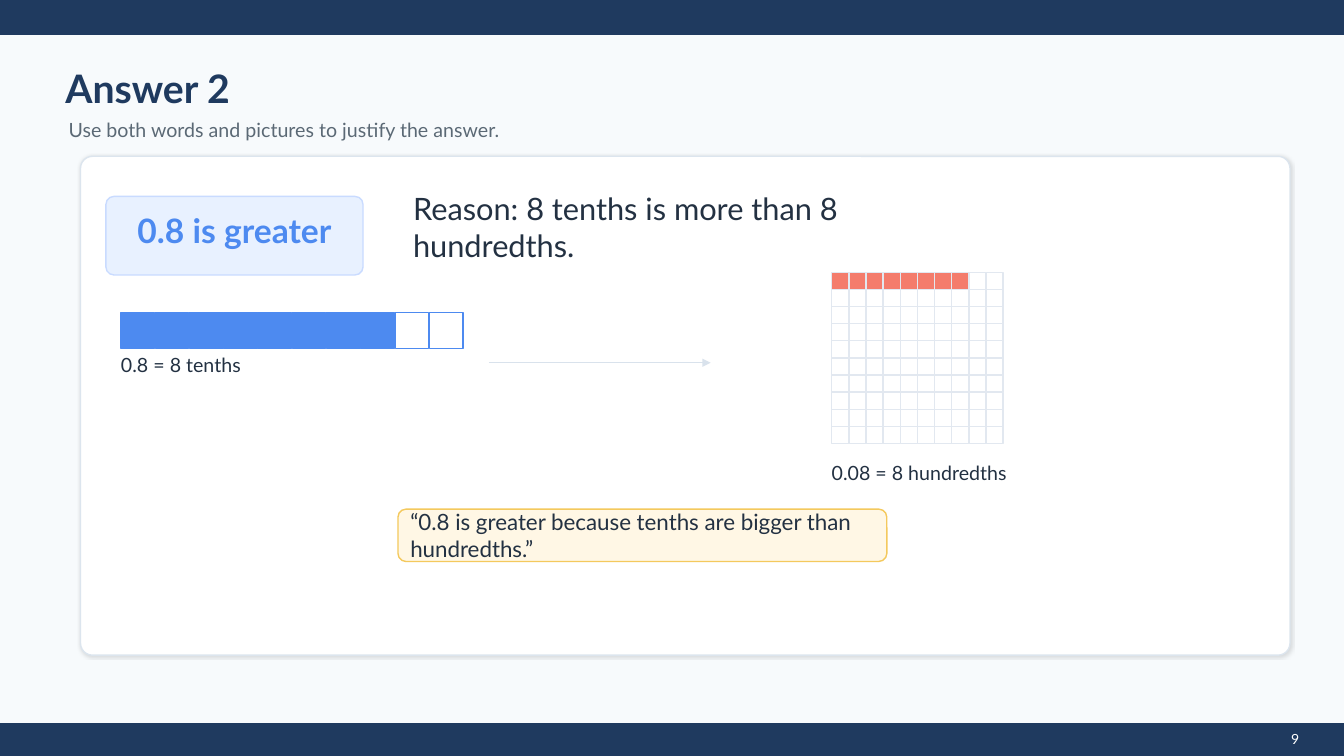
"""Build the "Answer 2" slide comparing 0.8 with 0.08."""
from dataclasses import dataclass

from lxml import etree
from pptx import Presentation
from pptx.dml.color import RGBColor
from pptx.enum.shapes import MSO_CONNECTOR, MSO_SHAPE
from pptx.enum.text import MSO_ANCHOR, PP_ALIGN
from pptx.oxml import parse_xml
from pptx.oxml.ns import nsdecls, qn
from pptx.util import Cm, Pt

RECT = MSO_SHAPE.RECTANGLE
ROUND = MSO_SHAPE.ROUNDED_RECTANGLE
STRAIGHT = MSO_CONNECTOR.STRAIGHT
TOP, MIDDLE = MSO_ANCHOR.TOP, MSO_ANCHOR.MIDDLE
LEFT, CENTER = PP_ALIGN.LEFT, PP_ALIGN.CENTER


@dataclass(frozen=True)
class Theme:
    """Colours, font and type sizes of the slide."""
    font: str = "Lato"
    back: str = "F7FAFC"
    navy: str = "1F3A5F"
    gray: str = "5B6975"
    ink: str = "233142"
    white: str = "FFFFFF"
    edge: str = "DCE5EE"
    blue: str = "4D8AF0"
    pale: str = "E8F1FF"
    rim: str = "C9DBFF"
    coral: str = "F47C6C"
    mesh: str = "E2E8F0"
    arrow: str = "D9E2EC"
    cream: str = "FFF7E5"
    gold: str = "F4C95D"
    title: int = 28
    answer: int = 24
    reason: int = 22
    quote: int = 16
    label: int = 14
    page: int = 10


THEME = Theme()


def rgb(code):
    """Turn a hex code into a colour."""
    return RGBColor.from_string(code)


def add_text(slide, text, box, size=THEME.label, color=THEME.ink, bold=False,
             align=LEFT, anchor=MIDDLE, pad=(0, 0)):
    """Add a wrapped text box; box and pad are in centimetres."""
    frame = slide.shapes.add_textbox(*map(Cm, box)).text_frame
    frame.word_wrap = True
    frame.vertical_anchor = anchor
    frame.margin_left = frame.margin_right = Cm(pad[0])
    frame.margin_top = frame.margin_bottom = Cm(pad[1])
    para = frame.paragraphs[0]
    para.alignment = align
    run = para.add_run()
    run.text = text
    font = run.font
    font.name, font.size, font.bold = THEME.font, Pt(size), bold
    font.color.rgb = rgb(color)


def add_box(slide, box, fill, line, curve=None):
    """Add a filled rectangle, rounded when a curve is given."""
    shape = slide.shapes.add_shape(RECT if curve is None else ROUND, *map(Cm, box))
    if curve is not None:
        shape.adjustments[0] = curve
    shape.shadow.inherit = False
    shape.fill.solid()
    shape.fill.fore_color.rgb = rgb(fill)
    shape.line.color.rgb = rgb(line)
    shape.line.width = Pt(1)
    return shape


def add_shade(shape):
    """Give a shape a faint shadow to the lower right."""
    shape._element.spPr.find(qn("a:effectLst")).append(parse_xml(
        f'<a:outerShdw {nsdecls("a")} blurRad="{Pt(2)}" dist="{Pt(1)}" '
        'dir="2700000" algn="ctr" rotWithShape="0"><a:srgbClr val="000000">'
        '<a:alpha val="12000"/></a:srgbClr></a:outerShdw>'))


def add_cells(slide, left, top, size, rows, full, fill, line):
    """Draw rows of ten cells with the first full ones coloured."""
    wide, high, step = size
    for n in range(rows * 10):
        row, col = divmod(n, 10)
        box = (left + col * step, top + row * high, wide, high)
        add_box(slide, box, fill if n < full else THEME.white, line)


def add_arrow(slide, start, end):
    """Draw a thin arrow between two points."""
    link = slide.shapes.add_connector(STRAIGHT, *map(Cm, start + end))
    link.line.color.rgb = rgb(THEME.arrow)
    link.line.width = Pt(1)
    etree.SubElement(link.line._get_or_add_ln(), qn("a:tailEnd"), type="triangle")
    etree.SubElement(link._element.spPr, qn("a:effectLst"))


def add_frame(slide):
    """Draw the background, both bands, the heading and the page number."""
    slide.background.fill.solid()
    slide.background.fill.fore_color.rgb = rgb(THEME.back)
    for top, high in ((0, 0.86), (18.24, 0.81)):
        add_box(slide, (0, top, 33.87, high), THEME.navy, THEME.navy)
    add_text(slide, "Answer 2", (1.65, 1.57, 17.78, 1.27),
             size=THEME.title, color=THEME.navy, bold=True)
    add_text(slide, "Use both words and pictures to justify the answer.",
             (1.73, 2.92, 20.83, 0.71), color=THEME.gray)
    add_text(slide, "9", (32.13, 18.29, 1.02, 0.41), size=THEME.page,
             color=THEME.white, align=CENTER, anchor=TOP, pad=(0.25, 0.13))


def add_answer(slide):
    """Draw the card with the answer and its reason."""
    card = add_box(slide, (2.03, 3.94, 30.48, 12.57), THEME.white, THEME.edge, 0.024)
    add_shade(card)
    add_box(slide, (2.67, 4.95, 6.48, 1.98), THEME.pale, THEME.rim, 0.103)
    add_text(slide, "0.8 is greater", (3.18, 5.49, 5.46, 0.61),
             size=THEME.answer, color=THEME.blue, bold=True, align=CENTER)
    add_text(slide, "Reason: 8 tenths is more than 8 hundredths.",
             (10.41, 5.33, 14.22, 0.76), size=THEME.reason)


def add_models(slide):
    """Draw the tenths bar, the hundredths grid and the arrow."""
    add_cells(slide, 3.05, 7.87, (0.84, 0.91, 0.864), 1, 8, THEME.blue, THEME.blue)
    add_text(slide, "0.8 = 8 tenths", (3.05, 8.89, 8.89, 0.61))
    add_cells(slide, 20.96, 6.86, (0.432, 0.432, 0.432), 10, 8,
              THEME.coral, THEME.mesh)
    add_text(slide, "0.08 = 8 hundredths", (20.96, 11.38, 6.1, 1.07))
    add_arrow(slide, (12.32, 9.14), (17.91, 9.14))


def add_quote(slide):
    """Draw the model sentence in its own box."""
    add_box(slide, (10.03, 12.83, 12.32, 1.32), THEME.cream, THEME.gold, 0.154)
    add_text(slide, "“0.8 is greater because tenths are bigger than hundredths.”",
             (10.34, 13.03, 11.71, 0.91), size=THEME.quote)


def main():
    """Build and save the slide."""
    deck = Presentation()
    deck.slide_width, deck.slide_height = Cm(33.87), Cm(19.05)
    slide = deck.slides.add_slide(deck.slide_layouts[6])
    add_frame(slide)
    add_answer(slide)
    add_models(slide)
    add_quote(slide)
    deck.save("out.pptx")


if __name__ == "__main__":
    main()
